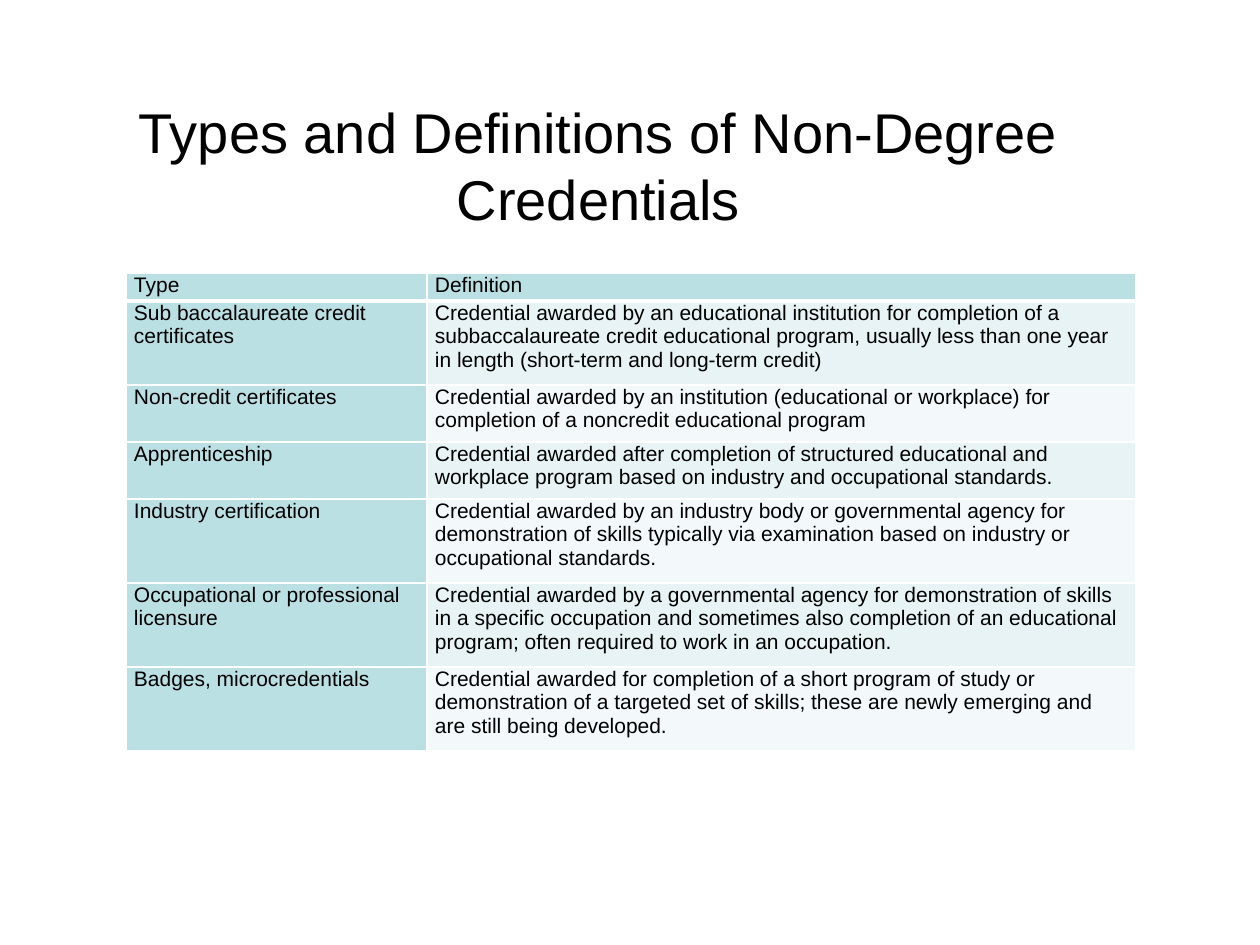
from lxml import etree
from pptx import Presentation
from pptx.dml.color import RGBColor
from pptx.enum.text import MSO_ANCHOR, MSO_AUTO_SIZE, PP_ALIGN
from pptx.oxml.ns import qn
from pptx.util import Pt

LEFT, CENTER = PP_ALIGN.LEFT, PP_ALIGN.CENTER
TOP, MIDDLE = MSO_ANCHOR.TOP, MSO_ANCHOR.MIDDLE
NO_FIT = MSO_AUTO_SIZE.NONE

BLACK = RGBColor(0x00, 0x00, 0x00)
WHITE = RGBColor(0xFF, 0xFF, 0xFF)
TEAL = RGBColor(0xBB, 0xE0, 0xE3)
BANDS = (RGBColor(0xE7, 0xF3, 0xF4), RGBColor(0xF3, 0xF9, 0xFA))

FONT = "Arial"
SCALE = 914400 / 126  # EMU in one px

TITLE = "Types and Definitions of Non-Degree Credentials"
COLS = (301, 709)
HEAD = 28
ROWS = [
    ("Type", "Definition", HEAD),
    ("Sub baccalaureate credit certificates",
     "Credential awarded by an educational institution for completion of a "
     "subbaccalaureate credit educational program, usually less than one year "
     "in length (short-term and long-term credit)", 84),
    ("Non-credit certificates",
     "Credential awarded by an institution (educational or workplace) for "
     "completion of a noncredit educational program", 57),
    ("Apprenticeship",
     "Credential awarded after completion of structured educational and "
     "workplace program based on industry and occupational standards.", 57),
    ("Industry certification",
     "Credential awarded by an industry body or governmental agency for "
     "demonstration of skills typically via examination based on industry or "
     "occupational standards.", 84),
    ("Occupational or professional licensure",
     "Credential awarded by a governmental agency for demonstration of skills "
     "in a specific occupation and sometimes also completion of an educational "
     "program; often required to work in an occupation.", 84),
    ("Badges, microcredentials",
     "Credential awarded for completion of a short program of study or "
     "demonstration of a targeted set of skills; these are newly emerging and "
     "are still being developed.", 84),
]


def px(n):
    return round(n * SCALE)


def write(frame, text, size=12, color=BLACK, align=LEFT):
    frame.text = text
    para = frame.paragraphs[0]
    para.alignment = align
    font = para.runs[0].font
    font.name, font.size = FONT, Pt(size)
    font.color.rgb = color


def pad(part, x, y):
    part.margin_left = part.margin_right = px(x)
    part.margin_top = part.margin_bottom = px(y)


def edge(cell, side, width):
    line = etree.SubElement(cell._tc.get_or_add_tcPr(), qn(f"a:ln{side}"),
                            w=str(Pt(width)))
    fill = etree.SubElement(line, qn("a:solidFill"))
    etree.SubElement(fill, qn("a:srgbClr"), val=str(WHITE))


def add_title(slide, x, y, w, h):
    title = slide.shapes.title
    title.left, title.top, title.width, title.height = map(px, (x, y, w, h))
    frame = title.text_frame
    frame.word_wrap = True
    frame.auto_size = NO_FIT
    frame.vertical_anchor = MIDDLE
    pad(frame, 13, 13)
    write(frame, TITLE, size=32, align=CENTER)


def add_grid(slide, x, y):
    tall = sum(row[-1] for row in ROWS)
    table = slide.shapes.add_table(len(ROWS), len(COLS), px(x), px(y),
                                   px(sum(COLS)), px(tall)).table
    table.first_row = table.horz_banding = False
    for col, wide in zip(table.columns, COLS):
        col.width = px(wide)
    for r, (*texts, high) in enumerate(ROWS):
        table.rows[r].height = px(high)
        for c, text in enumerate(texts):
            cell = table.cell(r, c)
            pad(cell, 8, 0)
            cell.vertical_anchor = TOP
            write(cell.text_frame, text)
            # Borders: a heavier rule between header and body
            for side in "LRTB":
                heavy = (r, side) in ((0, "B"), (1, "T"))
                edge(cell, side, 3 if heavy else 1)
            # Header row and type column share one fill
            cell.fill.solid()
            shade = TEAL if r == 0 or c == 0 else BANDS[(r - 1) % 2]
            cell.fill.fore_color.rgb = shade


def main():
    deck = Presentation()
    deck.slide_width, deck.slide_height = px(1260), px(945)
    slide = deck.slides.add_slide(deck.slide_layouts[5])
    add_title(slide, 0, 94, 1197, 141)
    add_grid(slide, 126, 273)
    deck.save("out.pptx")


if __name__ == "__main__":
    main()
